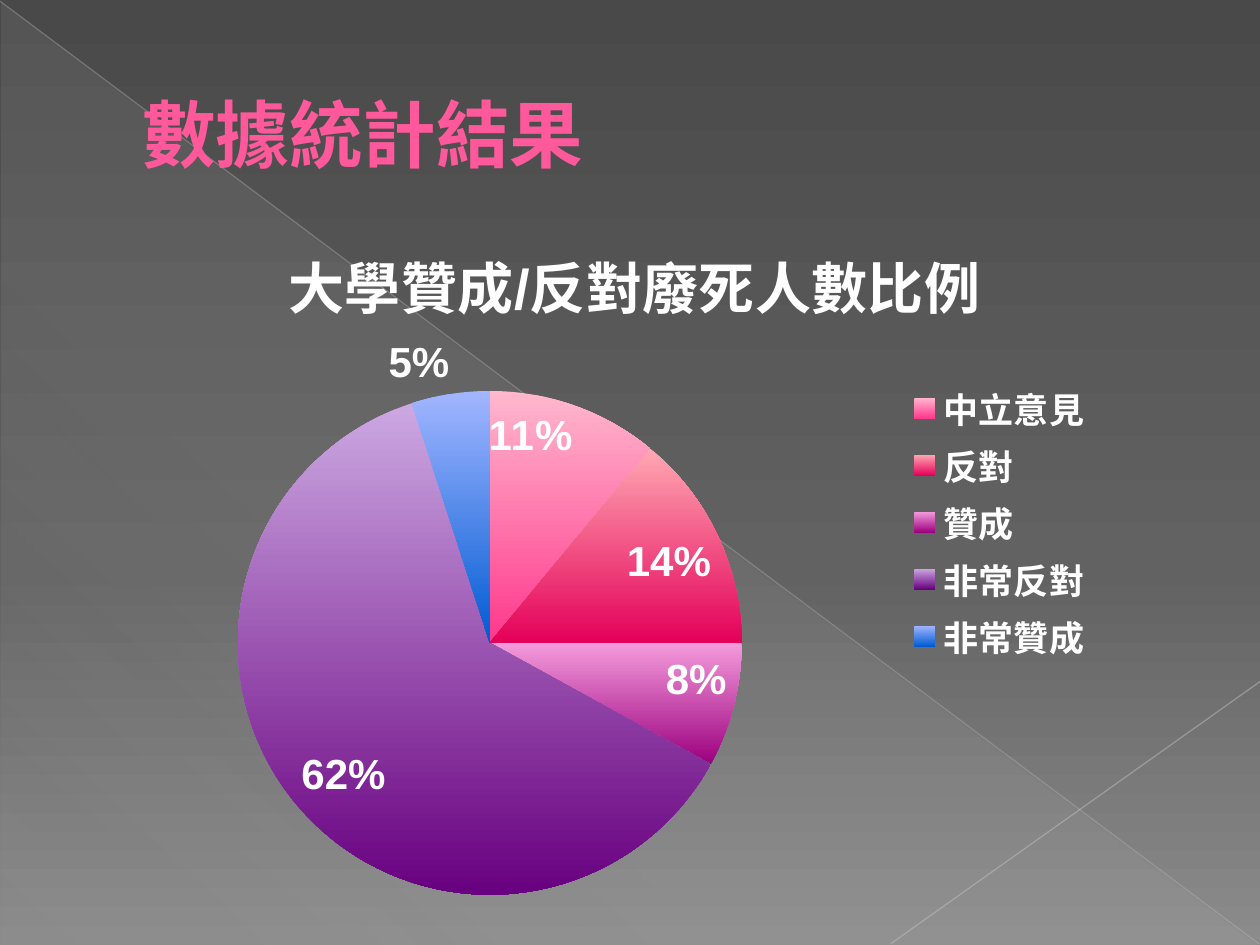
from lxml import etree
from pptx import Presentation
from pptx.chart.data import CategoryChartData
from pptx.dml.color import RGBColor
from pptx.enum.chart import XL_CHART_TYPE, XL_LABEL_POSITION, XL_LEGEND_POSITION
from pptx.enum.shapes import MSO_CONNECTOR, MSO_SHAPE
from pptx.enum.text import MSO_ANCHOR, MSO_AUTO_SIZE, PP_ALIGN
from pptx.oxml.ns import qn
from pptx.util import Pt

PIE = XL_CHART_TYPE.PIE
INSIDE = XL_LABEL_POSITION.INSIDE_END
OUTSIDE = XL_LABEL_POSITION.OUTSIDE_END
RIGHT = XL_LEGEND_POSITION.RIGHT
LINE = MSO_CONNECTOR.STRAIGHT
TRIANGLE = MSO_SHAPE.RIGHT_TRIANGLE
MIDDLE = MSO_ANCHOR.MIDDLE
NO_FIT = MSO_AUTO_SIZE.NONE
LEFT = PP_ALIGN.LEFT

COLORS = {
    "dark": "494949", "mid": "626262", "pale": "8B8B8B",
    "veil": "D2D2D2", "long": "BEBEBE", "short": "C5C5C5",
    "title": "FF599C", "text": "FFFFFF", "base": "000000",
}
SLICES = [
    ("中立意見", 11, "FFB8CE", "FF388C", INSIDE),
    ("反對", 14, "FFA8B2", "E40059", INSIDE),
    ("贊成", 8, "F49CDC", "9C007F", INSIDE),
    ("非常反對", 62, "CCA8E2", "68007F", INSIDE),
    ("非常贊成", 5, "A2B6FF", "005BD3", OUTSIDE),
]


class Deck:
    def __init__(self, wide, high):
        self.file = Presentation()
        self.file.slide_width, self.file.slide_height = Pt(wide), Pt(high)
        self.slide = self.file.slides.add_slide(self.file.slide_layouts[5])
        self.shapes = self.slide.shapes
        self.face = "Arial"
        self.head = "TeX Gyre Adventor"

    def font(self, font, size, color, face=None, bold=True):
        font.size, font.bold, font.name = Pt(size), bold, face or self.face
        font.color.rgb = RGBColor.from_string(COLORS[color])

    def alpha(self, node, value):
        etree.SubElement(node, qn("a:alpha"), val=str(value * 1000))

    def grad(self, fill, root, angle, stops):
        fill.gradient()
        fill.gradient_angle = 360 - angle
        group = next(root.iter(qn("a:gsLst")))
        for node in list(group):
            group.remove(node)
        for place, color, clear in stops:
            stop = etree.SubElement(group, qn("a:gs"), pos=str(place * 1000))
            tone = etree.SubElement(stop, qn("a:srgbClr"), val=color)
            if clear < 100:
                self.alpha(tone, clear)

    def back(self, stops):
        self.grad(self.slide.background.fill, self.slide.element, 90, stops)

    def veil(self, box, angle, stops):
        shape = self.shapes.add_shape(TRIANGLE, *map(Pt, box))
        shape.shadow.inherit = False
        shape.line.fill.background()
        self.grad(shape.fill, shape.element.spPr, angle, stops)

    def line(self, ends, color, clear):
        line = self.shapes.add_connector(LINE, *map(Pt, ends))
        line.line.width = Pt(0.75)
        line.line.color.rgb = RGBColor.from_string(COLORS[color])
        props = line.element.spPr
        self.alpha(next(props.iter(qn("a:srgbClr"))), clear)
        etree.SubElement(props, qn("a:effectLst"))

    def title(self, box, text):
        shape = self.shapes.title
        self.shapes.element.append(shape.element)
        shape.left, shape.top, shape.width, shape.height = map(Pt, box)
        frame = shape.text_frame
        frame.auto_size, frame.word_wrap = NO_FIT, True
        frame.vertical_anchor = MIDDLE
        frame.margin_left = frame.margin_right = Pt(7.2)
        frame.margin_top = frame.margin_bottom = Pt(7.2)
        para = frame.paragraphs[0]
        para.alignment = LEFT
        para._p.get_or_add_pPr().set("marL", str(Pt(38)))
        run = para.add_run()
        run.text = text
        self.font(run.font, 42, "title", self.head)

    def place(self, parent, inner, **sizes):
        old = parent.find(qn("c:layout"))
        if old is None:
            old = etree.Element(qn("c:layout"))
            tag = "c:legendPos" if parent.tag == qn("c:legend") else None
            if tag:
                parent.find(qn(tag)).addnext(old)
            else:
                parent.insert(0, old)
        for node in list(old):
            old.remove(node)
        manual = etree.SubElement(old, qn("c:manualLayout"))
        if inner:
            etree.SubElement(manual, qn("c:layoutTarget"), val="inner")
        for key in "xy":
            etree.SubElement(manual, qn(f"c:{key}Mode"), val="edge")
        for key, value in sizes.items():
            etree.SubElement(manual, qn(f"c:{key}"), val=str(value))

    def pie(self, box, text, slices):
        data = CategoryChartData()
        data.categories = [item[0] for item in slices]
        data.add_series("Series 1", [item[1] for item in slices])
        chart = self.shapes.add_chart(PIE, *map(Pt, box), data).chart
        self.font(chart.font, 10, "base", bold=False)
        chart.has_title = True
        run = chart.chart_title.text_frame.paragraphs[0].add_run()
        run.text = text
        self.font(run.font, 32, "text")
        chart.chart_title.include_in_layout = False
        chart.has_legend = True
        legend = chart.legend
        legend.position, legend.include_in_layout = RIGHT, False
        self.font(legend.font, 20, "text")
        plot = chart.plots[0]
        plot.vary_by_categories = True
        series = plot.series[0]
        labels = series.data_labels
        labels.show_percentage, labels.show_value = True, False
        labels.number_format, labels.number_format_is_linked = "0%", False
        labels.position = INSIDE
        self.font(labels.font, 24, "text")
        for index, (_, _, top, base, spot) in enumerate(slices):
            point = series.points[index]
            fill = point.format.fill
            node = series._element.findall(qn("c:dPt"))[index]
            self.grad(fill, node, 90, [(0, top, 100), (100, base, 100)])
            point.format.line.fill.background()
            if spot != INSIDE:
                label = point.data_label
                self.font(label.font, 24, "text")
                label.position = spot
                mark = label._dLbl
                mark.find(qn("c:showVal")).set("val", "0")
                mark.find(qn("c:showPercent")).set("val", "1")
        area = next(chart._chartSpace.iter(qn("c:plotArea")))
        self.place(area, True, x=0.13, y=0.26, w=0.47, h=0.71)
        self.place(legend._element, False, x=0.74, y=0.24, w=0.2, h=0.41)


def main():
    deck = Deck(720, 540)
    deck.back([(0, COLORS["dark"], 100), (60, COLORS["mid"], 100),
               (100, COLORS["pale"], 100)])
    veil = COLORS["veil"]
    deck.veil((0.7, 1.4, 718.6, 538.6), 133,
              [(0, veil, 10), (70, veil, 8), (100, veil, 1)])
    deck.line((0, 0.7, 719.3, 539.3), "long", 35)
    deck.line((720, 389.5, 509, 539.3), "short", 45)
    deck.title((36, 21, 648, 110), "數據統計結果")
    deck.pie((56, 118, 613.5, 405.5), "大學贊成/反對廢死人數比例", SLICES)
    deck.file.save("out.pptx")


if __name__ == "__main__":
    main()
